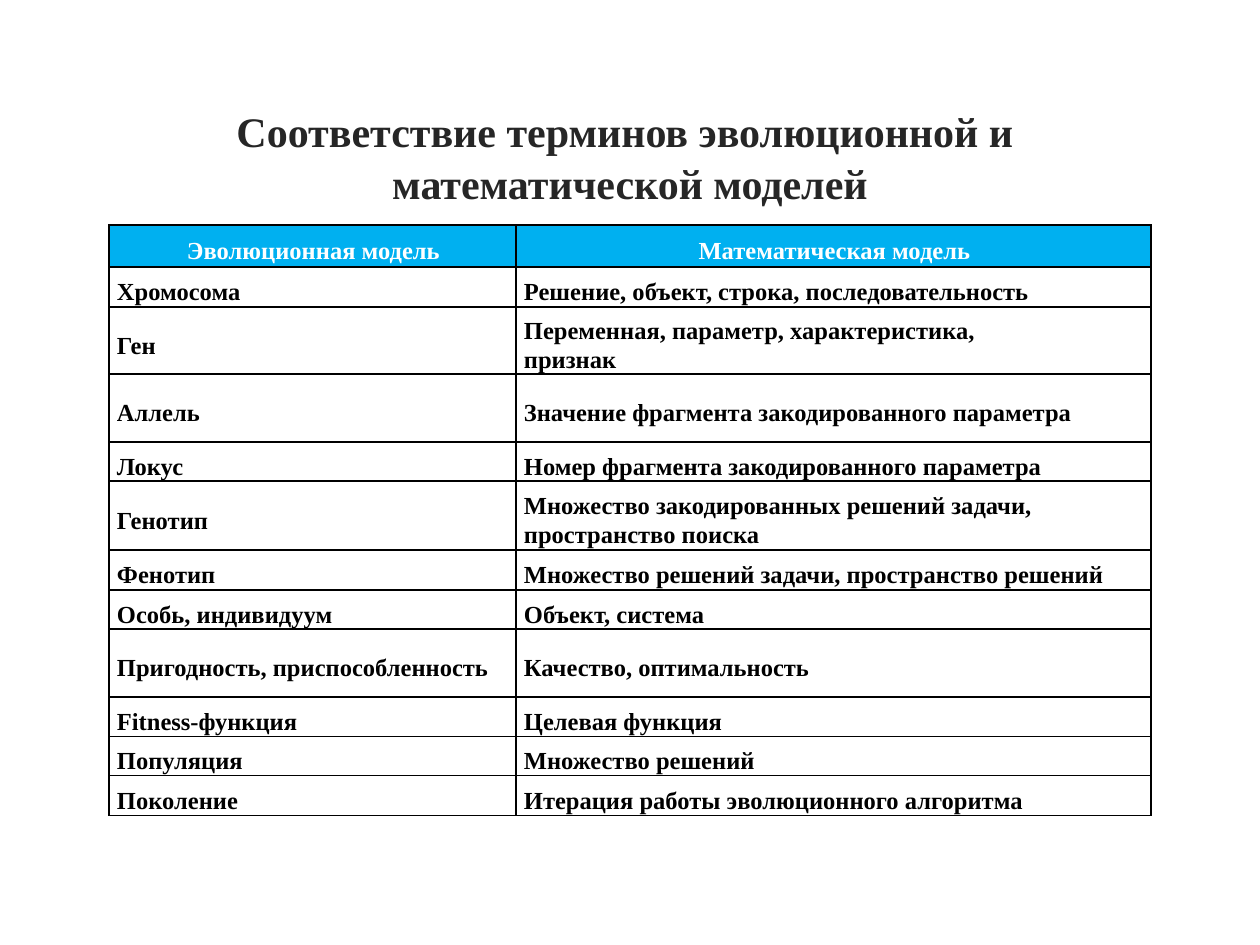
from typing import NamedTuple

from lxml import etree
from pptx import Presentation
from pptx import util as u
from pptx.dml.color import RGBColor
from pptx.enum import text as t
from pptx.oxml import ns

FONT = "Times New Roman"
HUES = {"title": "262626", "head": "00B0F0", "light": "FFFFFF", "dark": "000000"}


class Term(NamedTuple):
    evo: str
    math: str
    high: int


TERMS = [
    Term("Эволюционная модель", "Математическая модель", 42),
    Term("Хромосома", "Решение, объект, строка, последовательность", 40),
    Term("Ген", "Переменная, параметр, характеристика,\vпризнак", 67),
    Term("Аллель", "Значение фрагмента закодированного параметра", 68),
    Term("Локус", "Номер фрагмента закодированного параметра", 39),
    Term("Генотип", "Множество закодированных решений задачи, пространство поиска", 69),
    Term("Фенотип", "Множество решений задачи, пространство решений", 40),
    Term("Особь, индивидуум", "Объект, система", 39),
    Term("Пригодность, приспособленность", "Качество, оптимальность", 68),
    Term("Fitness-функция", "Целевая функция", 40),
    Term("Популяция", "Множество решений", 39),
    Term("Поколение", "Итерация работы эволюционного алгоритма", 40),
]
WIDTHS = [407, 635]


def px(n: int) -> u.Emu:
    return u.Emu(round(n * 914400 / 126))


def style(par, size: int, hue: str, align, space: float) -> None:
    par.alignment = align
    par.line_spacing = space
    font = par.font
    font.name = FONT
    font.size = u.Pt(size)
    font.bold = True
    font.color.rgb = RGBColor.from_string(HUES[hue])


def frame(cell) -> None:
    props = cell._tc.get_or_add_tcPr()
    for side in ("lnL", "lnR", "lnT", "lnB"):
        line = etree.SubElement(props, ns.qn(f"a:{side}"), w=str(u.Pt(1)))
        fill = etree.SubElement(line, ns.qn("a:solidFill"))
        etree.SubElement(fill, ns.qn("a:srgbClr"), val=HUES["dark"])


def draw_cell(cell, words: str, head: bool) -> None:
    cell.text = words
    cell.vertical_anchor = t.MSO_ANCHOR.MIDDLE
    cell.margin_left, cell.margin_top = px(8), px(9)
    cell.margin_right, cell.margin_bottom = px(6), px(0)
    frame(cell)
    if head:
        cell.fill.solid()
        cell.fill.fore_color.rgb = RGBColor.from_string(HUES["head"])
    else:
        cell.fill.background()
    align = t.PP_ALIGN.CENTER if head else t.PP_ALIGN.LEFT
    style(cell.text_frame.paragraphs[0], 14, "light" if head else "dark", align, 1.07)


def draw_title(slide) -> None:
    title = slide.shapes.title
    title.left, title.top, title.width, title.height = map(px, (144, 103, 972, 105))
    body = title.text_frame
    body.text = "Соответствие терминов эволюционной и \vматематической моделей"
    body.word_wrap = True
    body.auto_size = t.MSO_AUTO_SIZE.NONE
    body.vertical_anchor = t.MSO_ANCHOR.MIDDLE
    style(body.paragraphs[0], 24, "title", t.PP_ALIGN.CENTER, 1.04)


def draw_table(slide) -> None:
    high = sum(term.high for term in TERMS)
    box = map(px, (109, 225, sum(WIDTHS), high))
    table = slide.shapes.add_table(len(TERMS), len(WIDTHS), *box).table
    table.horz_banding = False
    for col, wide in zip(table.columns, WIDTHS):
        col.width = px(wide)
    for i, term in enumerate(TERMS):
        table.rows[i].height = px(term.high)
        for j, words in enumerate((term.evo, term.math)):
            draw_cell(table.cell(i, j), words, i == 0)


def main() -> None:
    deck = Presentation()
    deck.slide_width, deck.slide_height = px(1260), px(945)
    slide = deck.slides.add_slide(deck.slide_layouts[5])
    draw_title(slide)
    draw_table(slide)
    deck.save("out.pptx")


if __name__ == "__main__":
    main()
